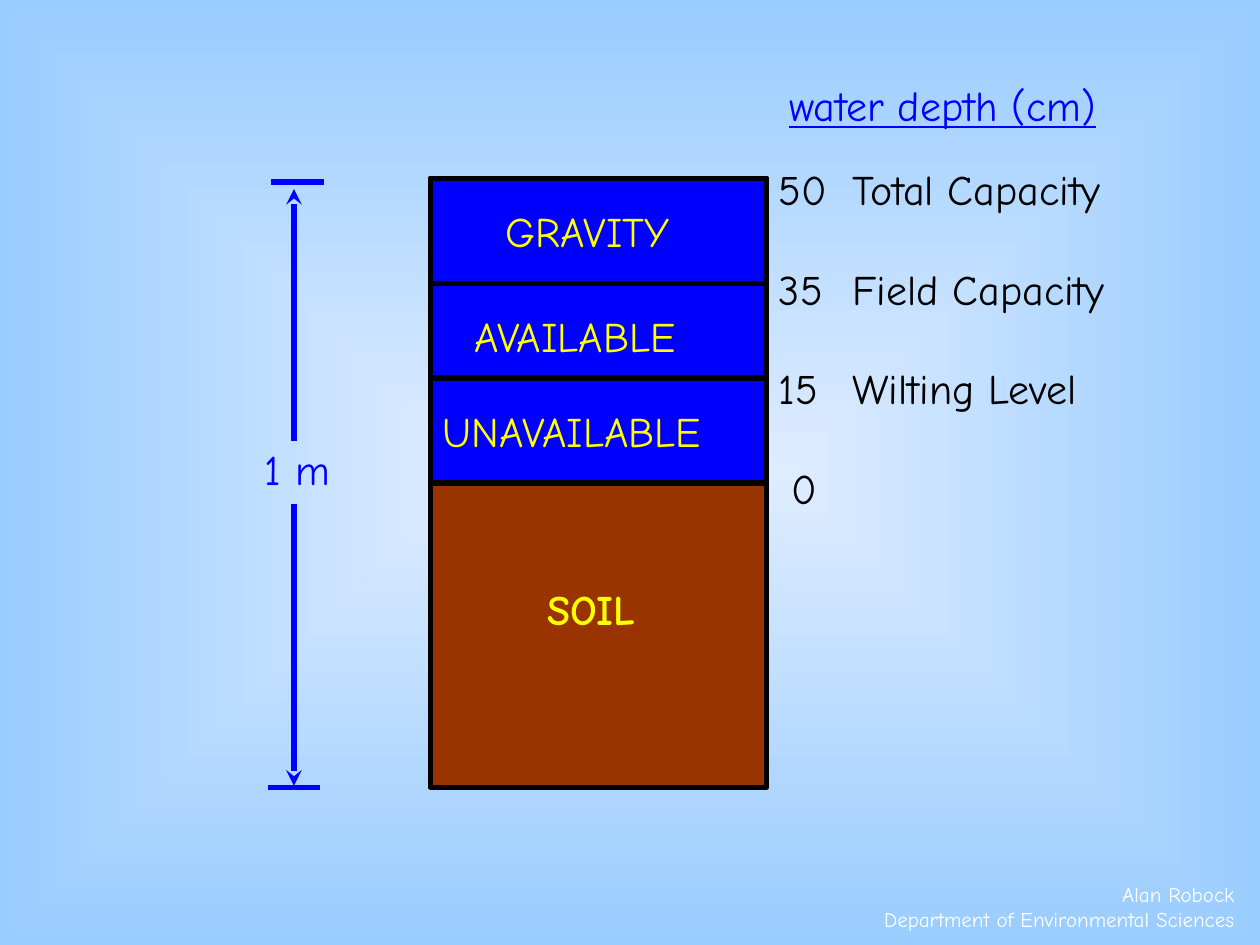
from pptx import Presentation
from pptx.util import Pt
from pptx.dml.color import RGBColor as RGB
from pptx.enum.shapes import MSO_SHAPE as Shape, MSO_CONNECTOR as Conn
from pptx.enum.text import MSO_AUTO_SIZE as Auto, PP_ALIGN as Align
from lxml.etree import SubElement as Sub
from pptx.oxml.ns import qn

HUE = {"mid": "DEECFF", "edge": "99CCFF", "soil": "993300", "blue": "0000FF",
       "black": "000000", "gold": "FFFF00", "white": "FFFFFF"}


def rgb(name):
    return RGB.from_string(HUE[name])


def add_text(x, y, w, h, lines, hue, size=24):
    box = slide.shapes.add_textbox(Pt(x), Pt(y), Pt(w), Pt(h))
    frame = box.text_frame
    frame.word_wrap = True
    frame.auto_size = Auto.SHAPE_TO_FIT_TEXT
    frame.text = "\n".join(lines)
    for para in frame.paragraphs:
        if "\t" in para.text:
            tabs = Sub(para._p.get_or_add_pPr(), qn("a:tabLst"))
            Sub(tabs, qn("a:tab"), pos=str(Pt(42)), algn="l")
        font = para.font
        font.name, font.size = "Comic Neue", Pt(size)
        font.color.rgb = rgb(hue)
    return frame.paragraphs


deck = Presentation()
deck.slide_width, deck.slide_height = Pt(720), Pt(540)
slide = deck.slides.add_slide(deck.slide_layouts[6])

fill = slide.background.fill
fill.gradient()
for stop, hue in zip(fill.gradient_stops, ["mid", "edge"]):
    stop.color.rgb = rgb(hue)
for stop, pos in zip(fill.gradient_stops, [0, 1]):
    stop.position = pos
grad = slide._element.find(".//" + qn("a:gradFill"))
grad.remove(grad.find(qn("a:lin")))
shade = Sub(grad, qn("a:path"), path="shape")
Sub(shade, qn("a:fillToRect"), l="50000", t="50000", r="50000", b="50000")

credit = add_text(466.5, 500, 246, 36,
                  ["Alan Robock", "Department of Environmental Sciences"], "white", 12)
for para in credit:
    para.alignment = Align.RIGHT

for y, h, hue in [(102, 348, "soil"), (102, 174, "blue"),
                  (102, 60, "blue"), (162, 60, "blue"), (216, 60, "blue")]:
    rect = slide.shapes.add_shape(Shape.RECTANGLE, Pt(246), Pt(y), Pt(192), Pt(h))
    rect.shadow.inherit = False
    rect.fill.solid()
    rect.fill.fore_color.rgb = rgb(hue)
    rect.line.color.rgb = rgb("black")
    rect.line.width = Pt(3)

for x, y, w, word in [(282, 114, 132, "GRAVITY"), (264, 174, 156, "AVAILABLE"),
                      (246, 228, 204, "UNAVAILABLE")]:
    add_text(x, y, w, 36, [word], "gold")
add_text(306, 330, 108, 36, ["SOIL"], "gold")[0].font.bold = True
add_text(444, 42, 222, 36, ["water depth (cm)"], "blue")[0].font.underline = True

levels = add_text(438, 84, 258, 215,
                  ["50\tTotal Capacity", "35\tField Capacity", "15\tWilting Level", "0"],
                  "black")
levels[0].line_spacing = 1.2
for para in levels[1:]:
    para.line_spacing = 1.5
    para.space_before = Pt(13.8)
levels[3]._p.get_or_add_pPr().set("marL", str(Pt(7)))

for x1, y1, x2, y2, tip in [(168, 288, 168, 449, True), (168, 252, 168, 108, True),
                            (155, 104, 185, 104, False), (153, 450, 183, 450, False)]:
    line = slide.shapes.add_connector(Conn.STRAIGHT, Pt(x1), Pt(y1), Pt(x2), Pt(y2))
    line.line.color.rgb = rgb("blue")
    line.line.width = Pt(3)
    if tip:
        Sub(line.line._get_or_add_ln(), qn("a:tailEnd"), type="stealth")
    Sub(line._element.spPr, qn("a:effectLst"))
add_text(144, 250, 54, 36, ["1 m"], "blue")

deck.save("out.pptx")
